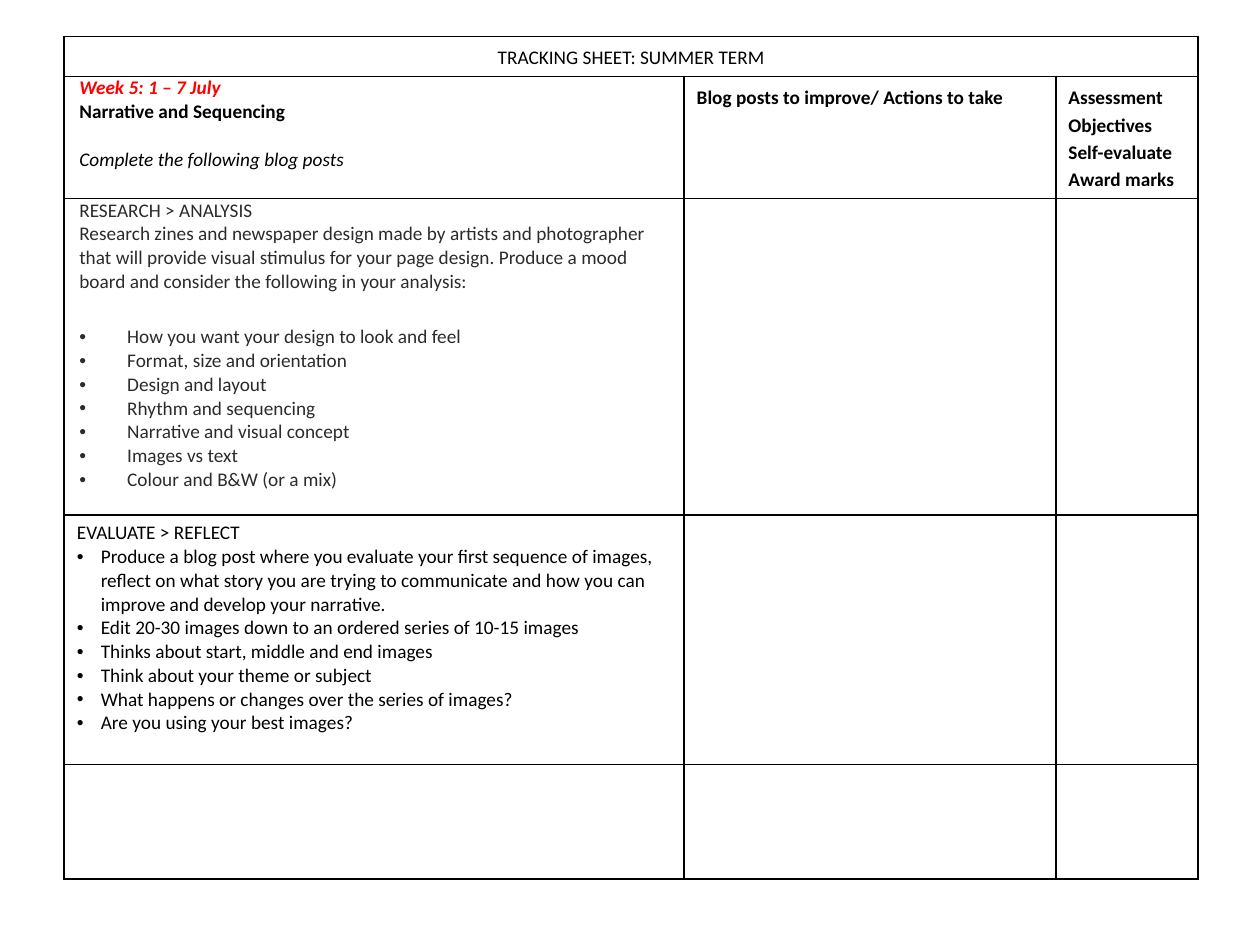
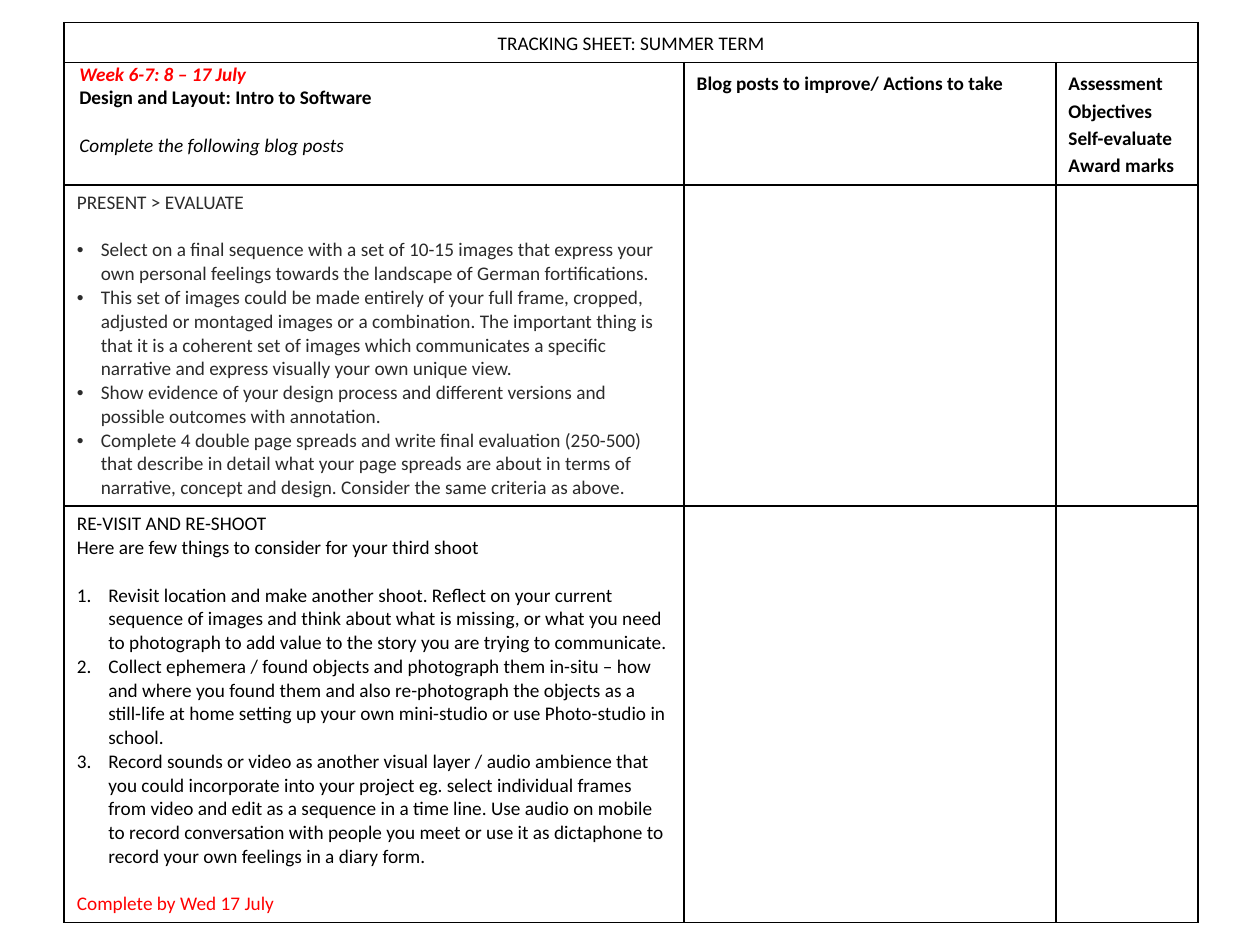
from lxml import etree
from pptx import Presentation, util as u
from pptx.dml.color import RGBColor
from pptx.enum import text
from pptx.oxml.ns import qn

FONT, SIZE = "Calibri", 11
BLACK, CHARCOAL, RED = "000000", "2B2B2B", "FF0000"
COLUMNS = (4.92, 2.95, 1.13)
TABLE_LEFT = 0.51
LINE_GAP = 13.5  # one empty line, in points
HEADER_INSETS = (0.12, 0)
CELL_INSETS = (0.1, 0.05)


def colour(value):
    return RGBColor.from_string(value)


def line(words, **style):
    """One paragraph of a cell with its formatting."""
    return dict(words=words, **style)


def listing(items, **style):
    """One formatted paragraph for each list item."""
    return [line(item, **style) for item in items]


def add_marker(paragraph, marker, indent):
    """Hang a bullet character or automatic number in the indent."""
    properties = paragraph._p.get_or_add_pPr()
    properties.set("marL", str(u.Inches(indent)))
    properties.set("indent", str(-u.Inches(indent)))
    if marker == "•":
        etree.SubElement(properties, qn("a:buFont"), typeface="Arial")
        etree.SubElement(properties, qn("a:buChar"), char=marker)
    else:
        etree.SubElement(properties, qn("a:buFont"), typeface="+mj-lt")
        etree.SubElement(properties, qn("a:buAutoNum"), type=marker)


def write_paragraph(paragraph, words, ink=BLACK, bold=False, italic=False,
                    align=text.PP_ALIGN.LEFT, spacing=1.0, before=0, after=0,
                    marker=None, indent=0):
    paragraph.text = words
    paragraph.alignment = align
    paragraph.line_spacing = spacing
    paragraph.space_before = u.Pt(before)
    paragraph.space_after = u.Pt(after)
    if marker:
        add_marker(paragraph, marker, indent)
    font = paragraph.font
    font.name, font.size = FONT, u.Pt(SIZE)
    font.bold, font.italic = bold, italic
    font.color.rgb = colour(ink)


def fill_cell(cell, lines, insets=CELL_INSETS):
    cell.margin_left = cell.margin_right = u.Inches(insets[0])
    cell.margin_top = cell.margin_bottom = u.Inches(insets[1])
    frame = cell.text_frame
    for number, content in enumerate(lines):
        paragraph = frame.add_paragraph() if number else frame.paragraphs[0]
        write_paragraph(paragraph, **content)


def rule_cell(cell):
    """Clear the cell's fill and draw a thin black line on each side."""
    properties = cell._tc.get_or_add_tcPr()
    for side in ("lnL", "lnR", "lnT", "lnB"):
        border = etree.SubElement(properties, qn(f"a:{side}"), w=str(u.Pt(1)))
        solid = etree.SubElement(border, qn("a:solidFill"))
        etree.SubElement(solid, qn("a:srgbClr"), val=BLACK)
    cell.fill.background()


def add_tracking_sheet(deck, top, row_heights, week, topic, tasks):
    """Add a slide with the shared headings and one row for each task."""
    slide = deck.slides.add_slide(deck.slide_layouts[6])
    sheet = slide.shapes.add_table(
        len(row_heights), len(COLUMNS), u.Inches(TABLE_LEFT), u.Inches(top),
        u.Inches(sum(COLUMNS)), u.Inches(sum(row_heights))).table
    sheet.first_row = sheet.horz_banding = False
    for column, width in zip(sheet.columns, COLUMNS):
        column.width = u.Inches(width)
    for row, height in zip(sheet.rows, row_heights):
        row.height = u.Inches(height)
    for cell in sheet.iter_cells():
        rule_cell(cell)

    # Term title across all columns
    sheet.cell(0, 0).merge(sheet.cell(0, len(COLUMNS) - 1))
    fill_cell(sheet.cell(0, 0), [line("TRACKING SHEET: SUMMER TERM", spacing=1.15,
                                      align=text.PP_ALIGN.CENTER)])

    # Column headings
    fill_cell(sheet.cell(1, 0), [
        line(week, ink=RED, bold=True, italic=True),
        line(topic, bold=True, after=LINE_GAP),
        line("Complete the following blog posts", italic=True),
    ], HEADER_INSETS)
    headings = (["Blog posts to improve/ Actions to take"],
                ["Assessment Objectives", "Self-evaluate", "Award marks"])
    for column, heading in enumerate(headings, start=1):
        fill_cell(sheet.cell(1, column), listing(heading, bold=True, spacing=1.15))

    # Tasks
    for row, (lines, insets) in enumerate(tasks, start=2):
        fill_cell(sheet.cell(row, 0), lines, insets)


def main():
    deck = Presentation()
    deck.slide_width, deck.slide_height = u.Inches(10), u.Inches(7.5)

    # Week 5
    research = [
        line("RESEARCH > ANALYSIS", ink=CHARCOAL),
        line("Research zines and newspaper design made by artists and photographer "
             "that will provide visual stimulus for your page design. Produce a mood "
             "board and consider the following in your analysis:",
             ink=CHARCOAL, after=18),
    ] + listing([
        "How you want your design to look and feel",
        "Format, size and orientation",
        "Design and layout",
        "Rhythm and sequencing",
        "Narrative and visual concept",
        "Images vs text",
        "Colour and B&W (or a mix)",
    ], ink=CHARCOAL, marker="•", indent=0.38)
    reflection = [line("EVALUATE > REFLECT")] + listing([
        "Produce a blog post where you evaluate your first sequence of images, "
        "reflect on what story you are trying to communicate and how you can "
        "improve and develop your narrative.",
        "Edit 20-30 images down to an ordered series of 10-15 images",
        "Thinks about start, middle and end images",
        "Think about your theme or subject",
        "What happens or changes over the series of images?",
        "Are you using your best images?",
    ], marker="•", indent=0.19)
    add_tracking_sheet(deck, 0.29, (0.31, 0.97, 2.51, 1.98, 0.91),
                       "Week 5: 1 – 7 July", "Narrative and Sequencing",
                       [(research, HEADER_INSETS), (reflection, CELL_INSETS)])

    # Weeks 6 and 7
    presentation = [line("PRESENT > EVALUATE", ink=CHARCOAL, after=LINE_GAP)] + listing([
        "Select on a final sequence with a set of 10-15 images that express your "
        "own personal feelings towards the landscape of German fortifications.",
        "This set of images could be made entirely of your full frame, cropped, "
        "adjusted or montaged images or a combination. The important thing is "
        "that it is a coherent set of images which communicates a specific "
        "narrative and express visually your own unique view.",
        "Show evidence of your design process and different versions and "
        "possible outcomes with annotation.",
        "Complete 4 double page spreads and write final evaluation (250-500) "
        "that describe in detail what your page spreads are about in terms of "
        "narrative, concept and design. Consider the same criteria as above.",
    ], ink=CHARCOAL, marker="•", indent=0.19)
    third_shoot = [
        line("RE-VISIT AND RE-SHOOT"),
        line("Here are few things to consider for your third shoot", after=LINE_GAP),
    ] + listing([
        "Revisit location and make another shoot. Reflect on your current "
        "sequence of images and think about what is missing, or what you need "
        "to photograph to add value to the story you are trying to communicate.",
        "Collect ephemera / found objects and photograph them in-situ – how "
        "and where you found them and also re-photograph the objects as a "
        "still-life at home setting up your own mini-studio or use Photo-studio in "
        "school.",
        "Record sounds or video as another visual layer / audio ambience that "
        "you could incorporate into your project eg. select individual frames "
        "from video and edit as a sequence in a time line. Use audio on mobile "
        "to record conversation with people you meet or use it as dictaphone to "
        "record your own feelings in a diary form.",
    ], marker="arabicPeriod", indent=0.25) + [
        line("Complete by Wed 17 July", ink=RED, before=LINE_GAP)]
    add_tracking_sheet(deck, 0.18, (0.31, 0.97, 2.55, 3.3),
                       "Week 6-7: 8 – 17 July", "Design and Layout: Intro to Software",
                       [(presentation, CELL_INSETS), (third_shoot, CELL_INSETS)])

    deck.save("out.pptx")


if __name__ == "__main__":
    main()
